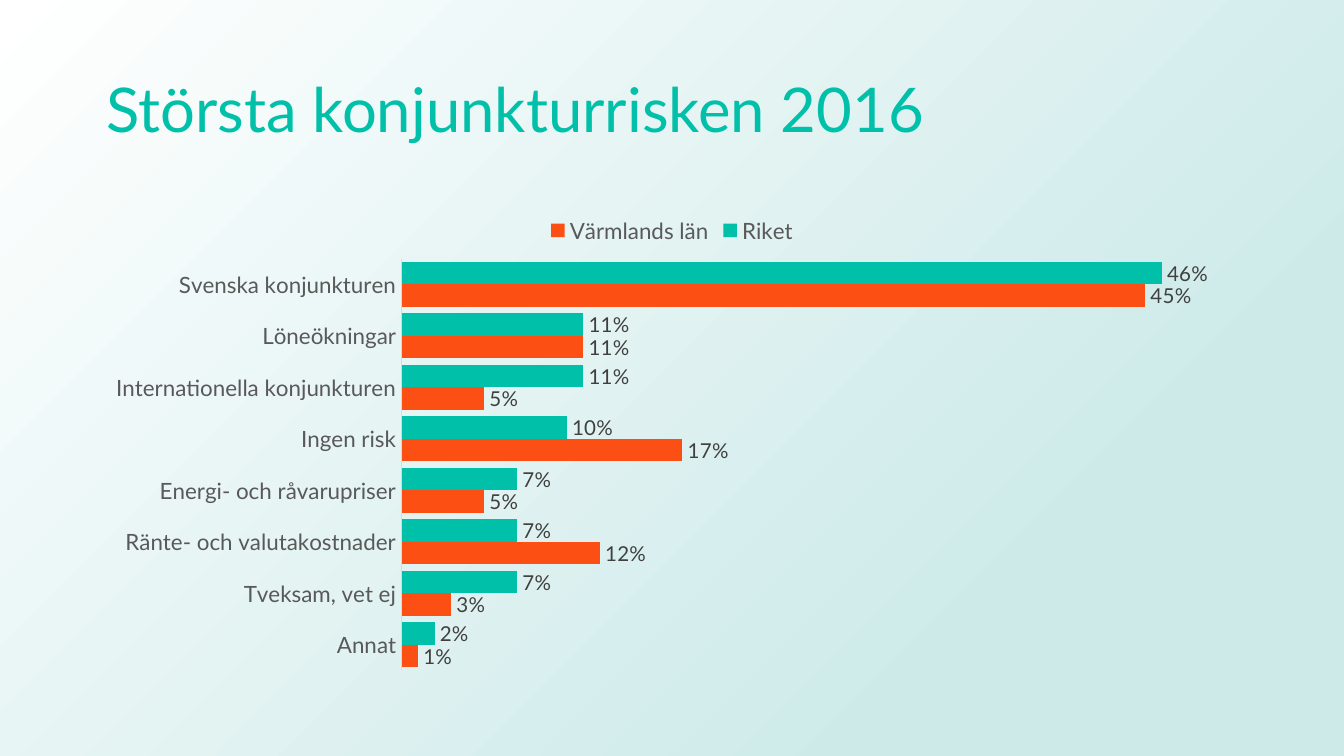
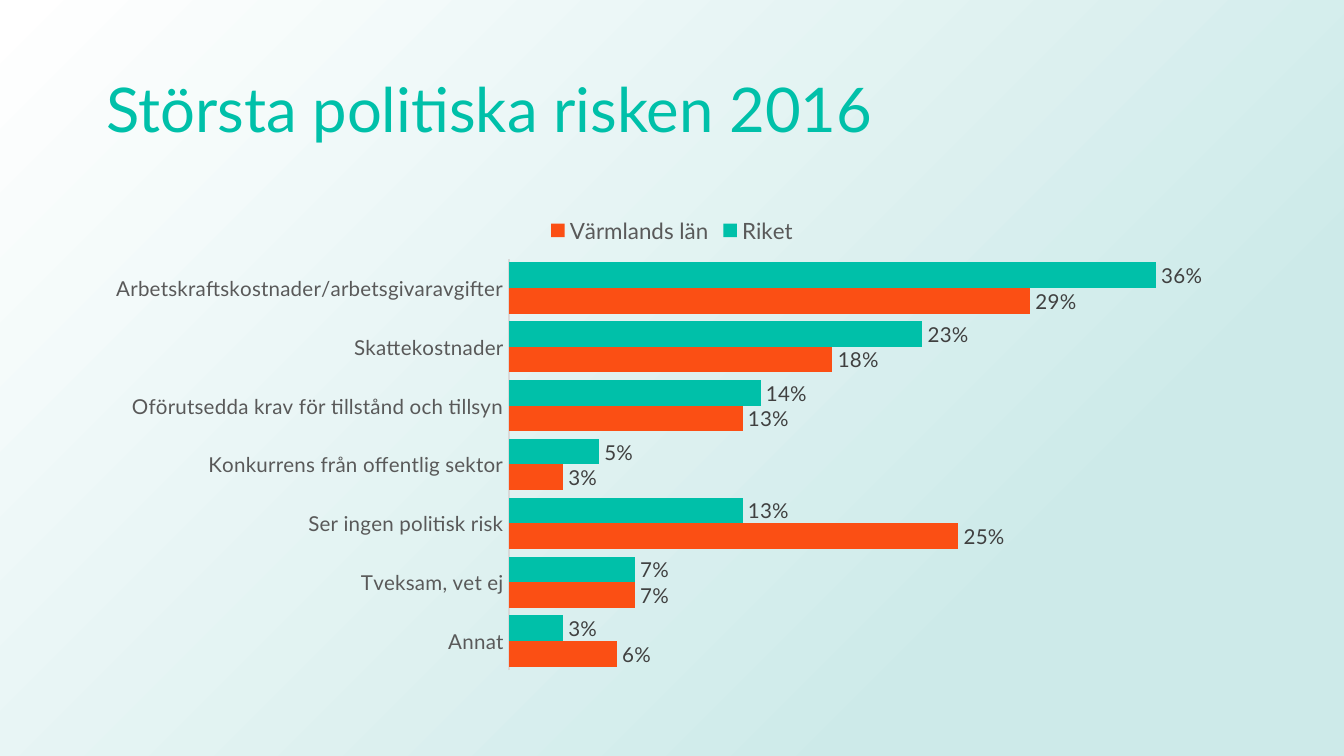
import pptx
import pptx.util
import pptx.dml.color
import pptx.chart.data
import pptx.enum.chart
import pptx.enum.shapes
import pptx.enum.text
import pptx.oxml

SCALE = 914400 / 134.4
WIDTH, HEIGHT = 1344, 756
LEFT, CONTENT_WIDTH = 93, 1158
TEAL, ORANGE = "00C0A9", "FB4F14"
LABEL_GREY, AXIS_GREY, LINE_GREY = "404040", "595959", "D9D9D9"
GRADIENT = (
    '<a:gradFill xmlns:a="http://schemas.openxmlformats.org/drawingml/2006/main" rotWithShape="1">'
    '<a:gsLst><a:gs pos="23000"><a:srgbClr val="CDEAE9"/></a:gs>'
    '<a:gs pos="100000"><a:srgbClr val="FFFFFF"/></a:gs></a:gsLst>'
    '<a:path path="circle"><a:fillToRect l="100000" t="100000"/></a:path></a:gradFill>'
)

RISKS = [
    ("Största konjunkturrisken 2016", 12, 0.5, [
        ("Svenska konjunkturen", 0.46, 0.45),
        ("Löneökningar", 0.11, 0.11),
        ("Internationella konjunkturen", 0.11, 0.05),
        ("Ingen risk", 0.10, 0.17),
        ("Energi- och råvarupriser", 0.07, 0.05),
        ("Ränte- och valutakostnader", 0.07, 0.12),
        ("Tveksam, vet ej", 0.07, 0.03),
        ("Annat", 0.02, 0.01),
    ]),
    ("Största politiska risken 2016", 11, 0.4, [
        ("Arbetskraftskostnader/arbetsgivaravgifter", 0.36, 0.29),
        ("Skattekostnader", 0.23, 0.18),
        ("Oförutsedda krav för tillstånd och tillsyn", 0.14, 0.13),
        ("Konkurrens från offentlig sektor", 0.05, 0.03),
        ("Ser ingen politisk risk", 0.13, 0.25),
        ("Tveksam, vet ej", 0.07, 0.07),
        ("Annat", 0.03, 0.06),
    ]),
]


def px(*lengths):
    return [round(length * SCALE) for length in lengths]


def style(font, size, color, name="Lato"):
    font.name = name
    font.size = pptx.util.Pt(size)
    font.bold = False
    font.color.rgb = pptx.dml.color.RGBColor.from_string(color)


deck = pptx.Presentation()
deck.slide_width, deck.slide_height = px(WIDTH, HEIGHT)

for title, category_size, maximum, rows in RISKS:
    page = deck.slides.add_slide(deck.slide_layouts[6])

    backdrop = page.shapes.add_shape(
        pptx.enum.shapes.MSO_SHAPE.RECTANGLE, *px(0, 0, WIDTH, HEIGHT))
    backdrop.shadow.inherit = False
    backdrop.line.fill.background()
    backdrop.fill.background()
    no_fill = backdrop.fill._xPr.find(pptx.oxml.ns.qn("a:noFill"))
    no_fill.getparent().replace(no_fill, pptx.oxml.parse_xml(GRADIENT))

    box = page.shapes.add_textbox(*px(LEFT, 40, CONTENT_WIDTH, 146))
    box.text_frame.word_wrap = True
    box.text_frame.vertical_anchor = pptx.enum.text.MSO_ANCHOR.MIDDLE
    para = box.text_frame.paragraphs[0]
    para.line_spacing = 0.9
    span = para.add_run()
    span.text = title
    style(span.font, 33, TEAL)

    categories, nation, county = zip(*rows)
    data = pptx.chart.data.CategoryChartData(number_format="0%")
    data.categories = categories
    data.add_series("Riket", nation)
    data.add_series("Värmlands län", county)
    chart = page.shapes.add_chart(
        pptx.enum.chart.XL_CHART_TYPE.BAR_CLUSTERED,
        *px(LEFT, 202, CONTENT_WIDTH, 478), data).chart
    style(chart.font, 10, "000000", "Calibri")
    chart.has_title = False
    chart.has_legend = True
    chart.legend.position = pptx.enum.chart.XL_LEGEND_POSITION.TOP
    chart.legend.include_in_layout = False
    style(chart.legend.font, 12, AXIS_GREY)

    category_axis = chart.category_axis
    category_axis.reverse_order = True
    category_axis.major_tick_mark = pptx.enum.chart.XL_TICK_MARK.NONE
    category_axis.minor_tick_mark = pptx.enum.chart.XL_TICK_MARK.NONE
    category_axis.format.line.width = pptx.util.Pt(0.75)
    category_axis.format.line.color.rgb = pptx.dml.color.RGBColor.from_string(LINE_GREY)
    style(category_axis.tick_labels.font, category_size, AXIS_GREY)

    value_axis = chart.value_axis
    value_axis.visible = False
    value_axis.has_major_gridlines = False
    value_axis.minimum_scale = 0
    value_axis.maximum_scale = maximum
    value_axis.tick_labels.number_format = "0%"
    value_axis.tick_labels.number_format_is_linked = False

    plot = chart.plots[0]
    plot.gap_width = 30
    plot.overlap = 0
    plot.vary_by_categories = False
    for series, color in zip(plot.series, (TEAL, ORANGE)):
        series.invert_if_negative = False
        series.format.fill.solid()
        series.format.fill.fore_color.rgb = pptx.dml.color.RGBColor.from_string(color)
        labels = series.data_labels
        labels.show_value = True
        labels.number_format = "0%"
        labels.number_format_is_linked = False
        labels.position = pptx.enum.chart.XL_LABEL_POSITION.OUTSIDE_END
        style(labels.font, 11, LABEL_GREY)

deck.save("out.pptx")
